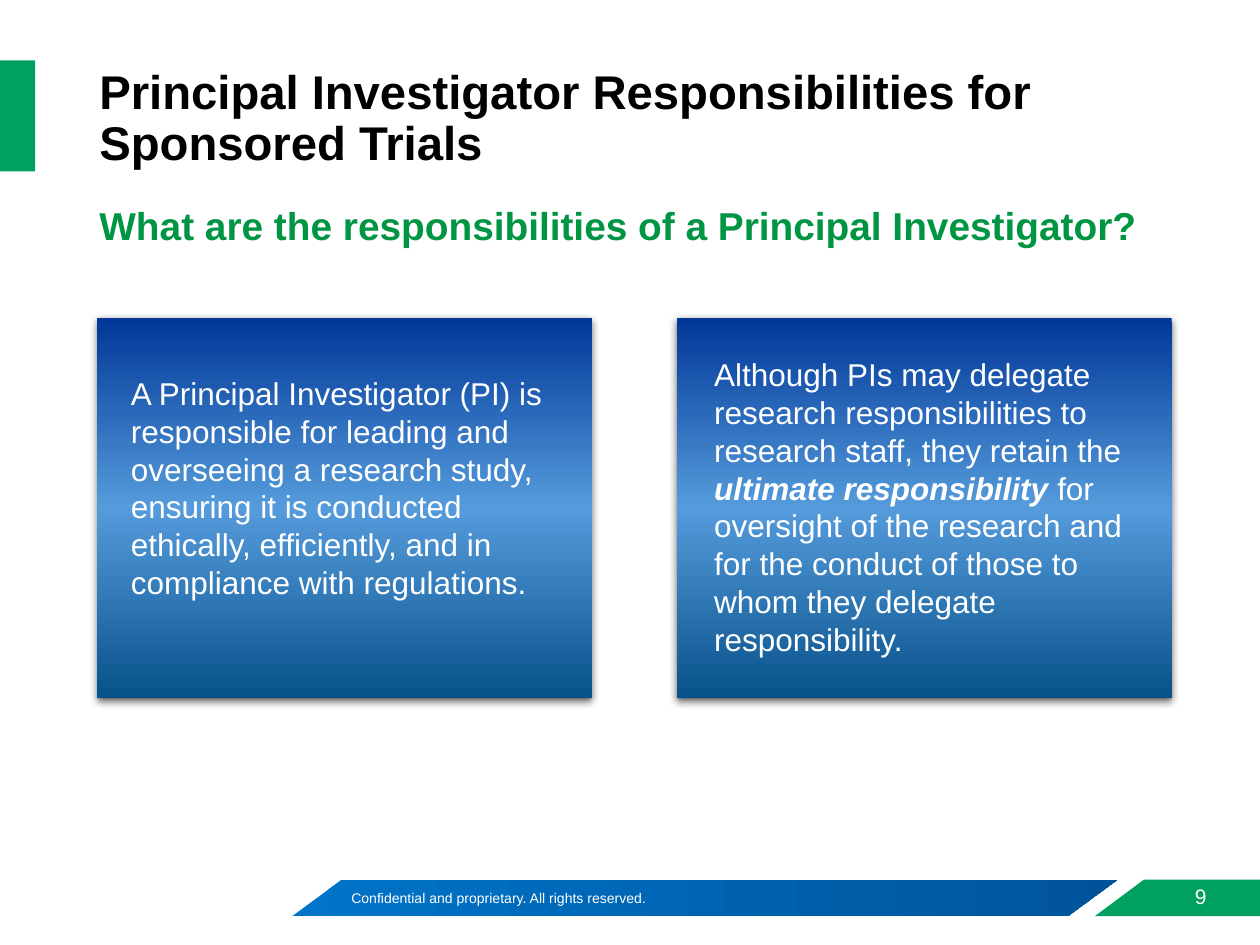
"""Build the slide on the responsibilities of a principal investigator."""
from dataclasses import dataclass

from lxml import etree
from pptx import Presentation
from pptx.dml.color import RGBColor
from pptx.enum.shapes import MSO_SHAPE
from pptx.enum.text import MSO_ANCHOR, PP_ALIGN
from pptx.oxml.ns import qn
from pptx.util import Inches, Pt

RECTANGLE, PARALLELOGRAM = MSO_SHAPE.RECTANGLE, MSO_SHAPE.PARALLELOGRAM
TOP, MIDDLE = MSO_ANCHOR.TOP, MSO_ANCHOR.MIDDLE
LEFT, CENTER = PP_ALIGN.LEFT, PP_ALIGN.CENTER
WIDTH, HEIGHT = Inches(10), Inches(7.5)
FONT = "Arial"
COLORS = {
    "white": "FFFFFF", "black": "000000", "green": "00A160", "heading": "009543",
    "bar_start": "0074C8", "bar_end": "00539B",
    "panel_top": "003798", "panel_middle": "559BDB", "panel_bottom": "08528C",
}


@dataclass(frozen=True)
class Area:
    """Place and size in percent of the slide's width and height."""
    left: float
    top: float
    width: float
    height: float

    def emu(self) -> tuple[int, int, int, int]:
        """Return left, top, width and height in EMU."""
        return (across(self.left), down(self.top), across(self.width), down(self.height))


@dataclass(frozen=True)
class Span:
    """A run of text with its emphasis."""
    text: str
    bold: bool = False
    italic: bool = False


@dataclass(frozen=True)
class TextBlock:
    """A one-paragraph text box."""
    area: Area
    spans: tuple[Span, ...]
    size: float
    color: str = "white"
    anchor: MSO_ANCHOR = TOP
    align: PP_ALIGN = LEFT
    line_spacing: float = 1.0


@dataclass(frozen=True)
class Block:
    """A filled preset shape; several fill colours make a gradient."""
    area: Area
    fill: tuple[str, ...]
    kind: MSO_SHAPE = RECTANGLE
    angle: int = 0
    slant: float | None = None
    shadow: bool = False


def across(share: float) -> int:
    """Convert a percentage of the slide's width to EMU."""
    return round(WIDTH * share / 100)


def down(share: float) -> int:
    """Convert a percentage of the slide's height to EMU."""
    return round(HEIGHT * share / 100)


def add_color(parent, name: str):
    """Append an RGB colour element to its parent."""
    return etree.SubElement(parent, qn("a:srgbClr"), val=COLORS[name])


def paint(shape, colors: tuple[str, ...], angle: int = 0) -> None:
    """Fill a shape evenly or with equally spaced gradient stops."""
    shape.shadow.inherit = False
    if len(colors) == 1:
        shape.fill.solid()
        shape.fill.fore_color.rgb = RGBColor.from_string(COLORS[colors[0]])
    else:
        gradient = etree.Element(qn("a:gradFill"), rotWithShape="1")
        stops = etree.SubElement(gradient, qn("a:gsLst"))
        for index, name in enumerate(colors):
            position = 100000 * index // (len(colors) - 1)
            add_color(etree.SubElement(stops, qn("a:gs"), pos=str(position)), name)
        etree.SubElement(gradient, qn("a:lin"), ang=str(angle * 60000), scaled="0")
        shape._element.spPr.find(qn("a:prstGeom")).addnext(gradient)
    shape.line.fill.background()


def add_shadow(shape) -> None:
    """Give a shape a soft shadow that falls straight down."""
    effects = shape._element.spPr.find(qn("a:effectLst"))
    shadow = etree.SubElement(effects, qn("a:outerShdw"), blurRad=str(Pt(4.5)),
                              dist=str(Pt(1.5)), dir="5400000", rotWithShape="0")
    etree.SubElement(add_color(shadow, "black"), qn("a:alpha"), val="63000")


def draw_block(page, block: Block) -> None:
    """Draw a filled preset shape."""
    shape = page.shapes.add_shape(block.kind, *block.area.emu())
    if block.slant is not None:
        shape.adjustments[0] = block.slant
    paint(shape, block.fill, block.angle)
    if block.shadow:
        add_shadow(shape)


def draw_polygon(page, points: list[tuple[float, float]], color: str) -> None:
    """Draw a closed outline through points given in percent."""
    corners = [(across(x), down(y)) for x, y in points]
    builder = page.shapes.build_freeform(*corners[0])
    builder.add_line_segments(corners[1:], close=True)
    paint(builder.convert_to_shape(), (color,))


def draw_text(page, block: TextBlock) -> None:
    """Draw a text box run by run."""
    frame = page.shapes.add_textbox(*block.area.emu()).text_frame
    frame.word_wrap = True
    frame.vertical_anchor = block.anchor
    para = frame.paragraphs[0]
    para.alignment = block.align
    para.line_spacing = block.line_spacing
    for span in block.spans:
        run = para.add_run()
        run.text = span.text
        run.font.name = FONT
        run.font.size = Pt(block.size)
        run.font.bold = span.bold
        run.font.italic = span.italic
        run.font.color.rgb = RGBColor.from_string(COLORS[block.color])


PANEL_FILL = ("panel_top", "panel_middle", "panel_bottom")
FOOTER_TOP, FOOTER_BOTTOM = 93.07, 96.94
BLOCKS = [
    Block(Area(23.2, FOOTER_TOP, 65.5, 3.87), ("bar_start", "bar_end"), PARALLELOGRAM, slant=1.36),
    Block(Area(0, 6.4, 2.8, 11.73), ("green",)),
    *(Block(Area(left, 33.6, 39.3, 40.27), PANEL_FILL, angle=90, shadow=True)
      for left in (7.7, 53.7)),
]
PAGE_TAB = [(86.9, FOOTER_BOTTOM), (90.8, FOOTER_TOP), (100, FOOTER_TOP), (100, FOOTER_BOTTOM)]
TEXTS = [
    TextBlock(Area(6.9, 6.8, 86.2, 11.73),
              (Span("Principal Investigator Responsibilities for Sponsored Trials", bold=True),),
              27, "black", MIDDLE, line_spacing=0.9),
    TextBlock(Area(6.9, 21.2, 86.2, 9.6),
              (Span("What are the responsibilities of a Principal Investigator?", bold=True),),
              22.2, "heading", line_spacing=0.9),
    TextBlock(Area(9.4, 38.93, 35.9, 29.6),
              (Span("A Principal Investigator (PI) is responsible for leading and overseeing "
                    "a research study, ensuring it is conducted ethically, efficiently, "
                    "and in compliance with regulations."),), 18),
    TextBlock(Area(55.7, 36.93, 37.4, 33.6),
              (Span("Although PIs may delegate research responsibilities to research staff, "
                    "they retain the "),
               Span("ultimate responsibility ", bold=True, italic=True),
               Span("for oversight of the research and for the conduct of those to whom "
                    "they delegate responsibility.")), 18),
    TextBlock(Area(26.9, 93.47, 38.3, 3.2),
              (Span("Confidential and proprietary. All rights reserved."),), 8),
    TextBlock(Area(93, 92.8, 4.6, 4.13), (Span("9"),), 12, anchor=MIDDLE, align=CENTER),
]


def main() -> None:
    """Assemble and save the deck."""
    deck = Presentation()
    deck.slide_width, deck.slide_height = WIDTH, HEIGHT
    page = deck.slides.add_slide(deck.slide_layouts[6])
    for block in BLOCKS:
        draw_block(page, block)
    draw_polygon(page, PAGE_TAB, "green")
    for text in TEXTS:
        draw_text(page, text)
    deck.save("out.pptx")


if __name__ == "__main__":
    main()
